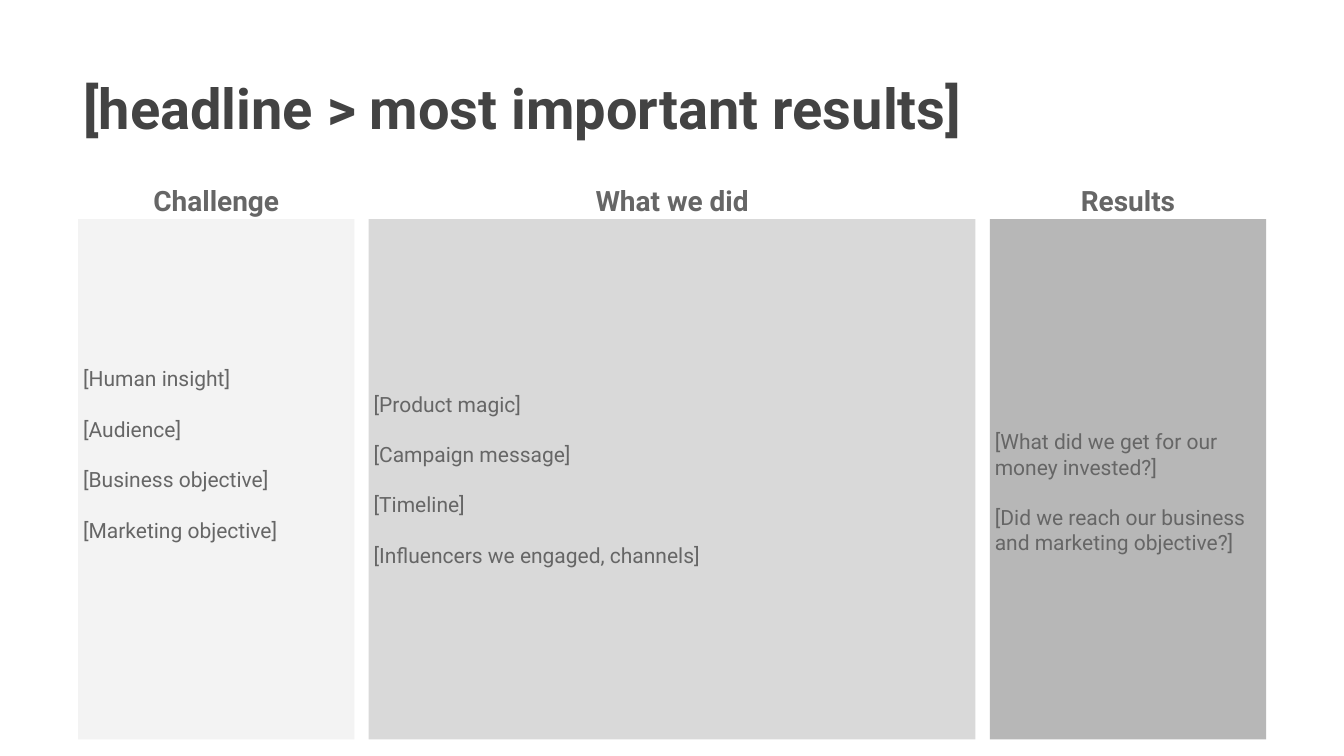
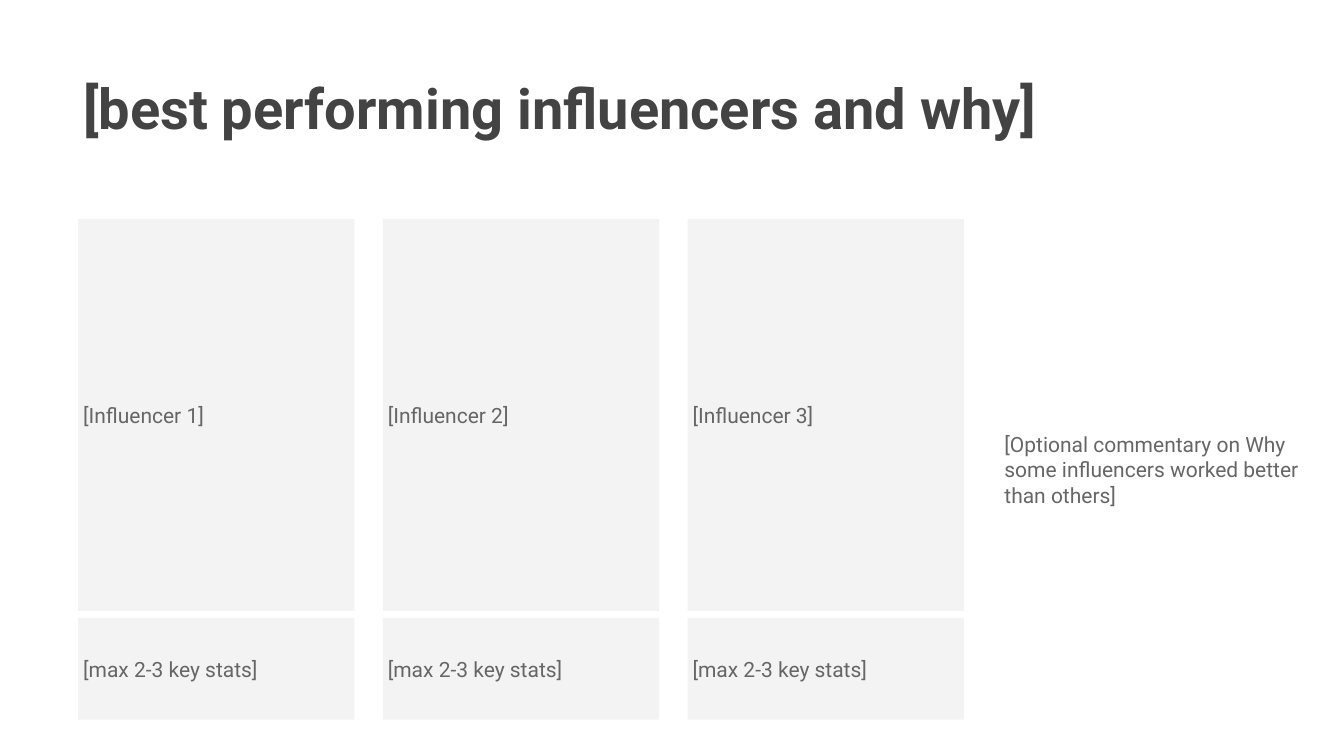
import pptx
import pptx.util
import pptx.dml.color
import pptx.enum.shapes
import pptx.enum.text

Pt = pptx.util.Pt
RGBColor = pptx.dml.color.RGBColor
ANCHOR = pptx.enum.text.MSO_ANCHOR
ALIGN = pptx.enum.text.PP_ALIGN

# Shared colours and type
DARK = RGBColor(0x43, 0x43, 0x43)
GREY = RGBColor(0x66, 0x66, 0x66)
LIGHT = RGBColor(0xF3, 0xF3, 0xF3)
MID = RGBColor(0xD9, 0xD9, 0xD9)
DEEP = RGBColor(0xB7, 0xB7, 0xB7)
FONT = "Roboto"
LINE = 36  # height of one line of body text

# Shared layout
LEFT, TOP = 111.6, 313.2
CARD_W = 394.6
PAD = 7.2


def write(sp, lines, size, color=GREY, bold=False, align=ALIGN.LEFT,
          anchor=ANCHOR.MIDDLE, pad_top=PAD, pad_bottom=PAD):
    tf = sp.text_frame
    tf.word_wrap = True
    tf.vertical_anchor = anchor
    tf.margin_left = tf.margin_right = Pt(PAD)
    tf.margin_top, tf.margin_bottom = Pt(pad_top), Pt(pad_bottom)
    for i, line in enumerate(lines):
        p = tf.paragraphs[0] if i == 0 else tf.add_paragraph()
        p.alignment = align
        if i:
            p.space_before = Pt(LINE)
        r = p.add_run()
        r.text = line
        r.font.name, r.font.size, r.font.bold = FONT, Pt(size), bold
        r.font.color.rgb = color


def add_text(s, x, y, w, h, text, size, **style):
    sp = s.shapes.add_textbox(Pt(x), Pt(y), Pt(w), Pt(h))
    write(sp, [text], size, **style)


def add_title(s, text):
    add_text(s, LEFT, 101.5, 1666.8, 162, text, 80, color=DARK, bold=True,
             anchor=ANCHOR.TOP, pad_top=3.6, pad_bottom=3.6)


def add_heading(s, x, w, text):
    add_text(s, x, 257.8, w, 55.4, text, 40, bold=True, align=ALIGN.CENTER,
             pad_top=3.6, pad_bottom=3.6)


def add_card(s, x, y, w, h, fill, lines, **style):
    sp = s.shapes.add_shape(pptx.enum.shapes.MSO_SHAPE.RECTANGLE,
                            Pt(x), Pt(y), Pt(w), Pt(h))
    sp.shadow.inherit = False
    sp.fill.solid()
    sp.fill.fore_color.rgb = fill
    sp.line.fill.background()
    write(sp, lines, 30, **style)


def add_slide(prs, title):
    s = prs.slides.add_slide(prs.slide_layouts[6])
    add_title(s, title)
    return s


def results_slide(prs):
    s = add_slide(prs, "[headline > most important results]")
    # Heading, width, fill, lines, extra padding that shifts the text
    columns = [
        ("Challenge", CARD_W, LIGHT,
         ["[Human insight]", "[Audience]", "[Business objective]",
          "[Marketing objective]"], {"pad_bottom": PAD + 2 * LINE}),
        ("What we did", 866.9, MID,
         ["[Product magic]", "[Campaign message]", "[Timeline]",
          "[Influencers we engaged, channels]"], {}),
        ("Results", CARD_W, DEEP,
         ["[What did we get for our money invested?]",
          "[Did we reach our business and marketing objective?]"],
         {"pad_top": PAD + LINE}),
    ]
    x = LEFT
    for heading, w, fill, lines, padding in columns:
        add_card(s, x, TOP, w, 743, fill, lines, **padding)
        add_heading(s, x, w, heading)
        x += w + 20.5


def influencers_slide(prs):
    s = add_slide(prs, "[best performing influencers and why]")
    # Influencer cards with key stats below
    for i in range(3):
        x = LEFT + i * 435.3
        add_card(s, x, TOP, CARD_W, 559.4, LIGHT, [f"[Influencer {i + 1}]"])
        add_card(s, x, 882.7, CARD_W, 145.4, LIGHT, ["[max 2-3 key stats]"])
    # Commentary
    add_text(s, 1427.8, TOP, 457.9, 715,
             "[Optional commentary on Why some influencers worked better "
             "than others]", 30)


def main():
    prs = pptx.Presentation()
    prs.slide_width, prs.slide_height = Pt(1920), Pt(1080)
    results_slide(prs)
    influencers_slide(prs)
    prs.save("out.pptx")


if __name__ == "__main__":
    main()
